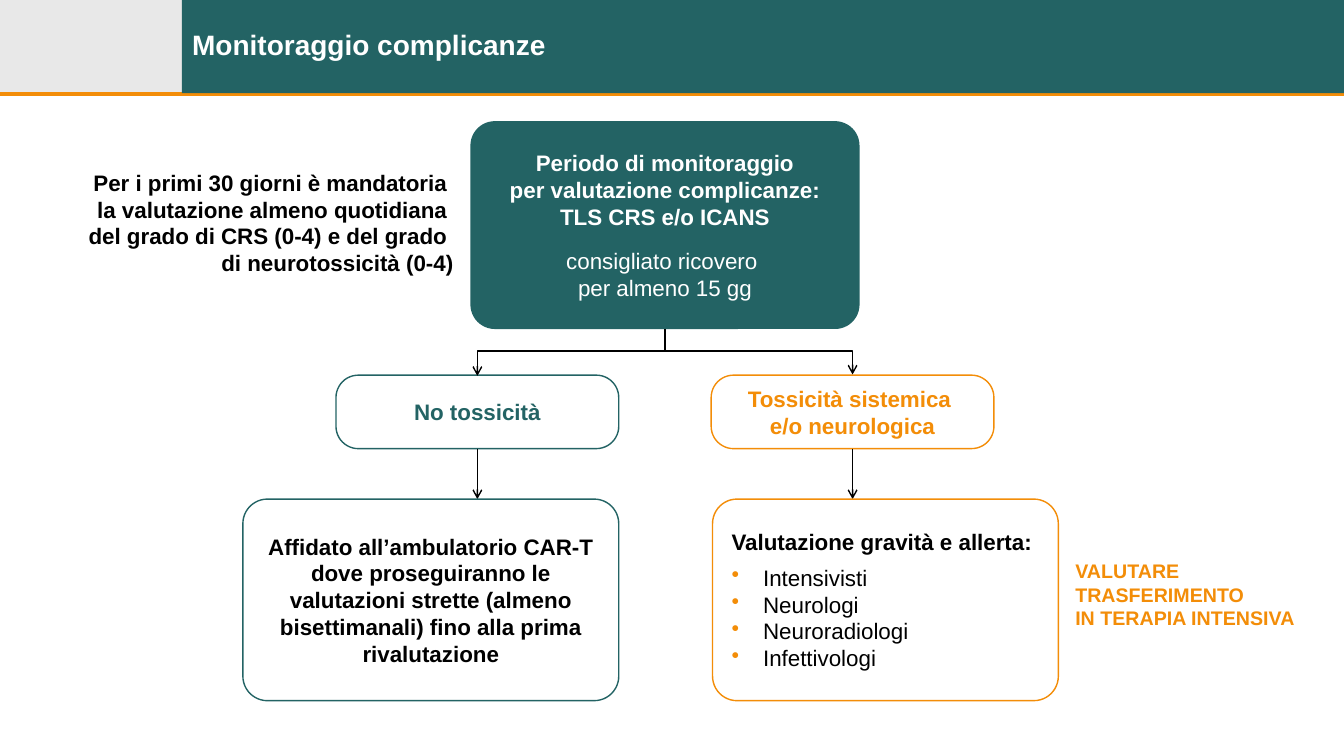
from lxml.etree import SubElement
from pptx import Presentation
from pptx.dml.color import RGBColor
from pptx.enum.shapes import MSO_CONNECTOR as Link, MSO_SHAPE as Shape
from pptx.enum.text import MSO_ANCHOR as Anchor, PP_ALIGN as Align
from pptx.oxml.ns import qn
from pptx.util import Pt

TEAL, ORANGE, GREY = "236364", "F38D08", "E8E8E8"
BLACK, WHITE = "000000", "FFFFFF"


def rgb(value):
    return RGBColor.from_string(value)


class FlowSlide:
    """Holds the slide and its style; all lengths are in points."""

    font = "Arial"

    def __init__(self, slide):
        self.slide = slide
        self.shapes = slide.shapes

    def set_text(self, frame, paragraphs, inset=7.2, anchor=Anchor.MIDDLE):
        """Each paragraph is (text, style); style holds what differs from the default."""
        frame.word_wrap = True
        frame.vertical_anchor = anchor
        frame.margin_left = frame.margin_right = Pt(inset)
        frame.margin_top = frame.margin_bottom = Pt(3.6)
        for index, (text, style) in enumerate(paragraphs):
            paragraph = frame.add_paragraph() if index else frame.paragraphs[0]
            paragraph.text = text
            if "bullet" in style:
                self.bullet(paragraph, style["bullet"])
            paragraph.alignment = style.get("align", Align.CENTER)
            paragraph.space_before = Pt(style.get("before", 0))
            paragraph.line_spacing = style.get("spacing", 1.0)
            font = paragraph.font
            font.name, font.size = self.font, Pt(style.get("size", 16))
            font.bold = style.get("bold", True)
            font.color.rgb = rgb(style.get("color", BLACK))

    def bullet(self, paragraph, color):
        properties = paragraph._p.get_or_add_pPr()
        properties.set("marL", str(Pt(22.5)))
        properties.set("indent", str(-Pt(22.5)))
        bullet_color = SubElement(properties, qn("a:buClr"))
        SubElement(bullet_color, qn("a:srgbClr"), val=color)
        SubElement(properties, qn("a:buChar"), char="•")

    def title(self, text, left, top, width, height, fill):
        title = self.shapes.title
        title.left, title.top, title.width, title.height = map(Pt, (left, top, width, height))
        title.fill.solid()
        title.fill.fore_color.rgb = rgb(fill)
        style = dict(align=Align.LEFT, size=20, color=WHITE, spacing=0.9)
        self.set_text(title.text_frame, [(text, style)])
        self.shapes._spTree.append(title._element)  # in front of the header rule

    def box(self, left, top, width, height, paragraphs=(), fill=None, line=None,
            radius=0, inset=0):
        kind = Shape.ROUNDED_RECTANGLE if radius else Shape.RECTANGLE
        box = self.shapes.add_shape(kind, *map(Pt, (left, top, width, height)))
        box.shadow.inherit = False
        if radius:
            box.adjustments[0] = radius / min(width, height)
        if fill:
            box.fill.solid()
            box.fill.fore_color.rgb = rgb(fill)
        else:
            box.fill.background()
        if line:
            box.line.color.rgb = rgb(line)
            box.line.width = Pt(1)
        else:
            box.line.fill.background()
        self.set_text(box.text_frame, paragraphs, inset)
        return box

    def note(self, left, top, width, height, text, **style):
        note = self.shapes.add_textbox(*map(Pt, (left, top, width, height)))
        self.set_text(note.text_frame, [(text, style)], anchor=Anchor.TOP)

    def line(self, x1, y1, x2, y2, color=BLACK, width=1, ends=(), kind=Link.STRAIGHT):
        line = self.shapes.add_connector(kind, *map(Pt, (x1, y1, x2, y2)))
        line.line.color.rgb = rgb(color)
        line.line.width = Pt(width)
        for end in ends:
            SubElement(line.line._get_or_add_ln(), qn(f"a:{end}"), type="arrow")
        SubElement(line._element.spPr, qn("a:effectLst"))
        return line

    def fork(self, left, right, bottom, rise):
        """Bracket over two boxes: an elbow of 1 pt width, turned by 90 degrees."""
        center, half = (left + right) / 2, (right - left) / 2
        fork = self.line(center + 0.5, bottom + half, center - 0.5, bottom - half,
                         ends=("headEnd", "tailEnd"), kind=Link.ELBOW)
        properties = fork._element.spPr
        properties.xfrm.set("rot", "5400000")
        geometry = properties.find(qn("a:prstGeom"))
        guides = geometry.get_or_add_avLst()
        SubElement(guides, qn("a:gd"), name="adj1", fmla=f"val {rise * 100000}")


def main():
    deck = Presentation()
    deck.slide_width, deck.slide_height = Pt(960), Pt(540)
    page = FlowSlide(deck.slides.add_slide(deck.slide_layouts[5]))

    # Header
    page.box(0, 0, 130, 66.5, fill=GREY)
    page.line(0, 67, 960, 67, ORANGE, 3)
    page.title("Monitoraggio complicanze", 130, 0, 830, 66.5, TEAL)

    # Monitoring period
    period = page.box(336, 86.5, 278, 148.5, [
        ("Periodo di monitoraggio\nper valutazione complicanze:\nTLS CRS e/o ICANS",
         dict(color=WHITE)),
        ("consigliato ricovero \nper almeno 15 gg",
         dict(color=WHITE, bold=False, before=12)),
    ], fill=TEAL, radius=17.5)

    # Outcomes, each with an arrow to its action
    outcomes = [(240, "No tossicità", TEAL),
                (508, "Tossicità sistemica \ne/o neurologica", ORANGE)]
    for left, text, color in outcomes:
        outcome = page.box(left, 268, 202, 52.5, [(text, dict(color=color))],
                           line=color, radius=16)
        arrow = page.line(left + 101, 320.5, left + 101, 356.5, ends=("tailEnd",))
        arrow.begin_connect(outcome, 2)

    # Actions
    page.box(173.5, 356.5, 268.5, 144, [
        ("Affidato all’ambulatorio CAR-T dove proseguiranno le valutazioni strette "
         "(almeno bisettimanali) fino alla prima rivalutazione", {}),
    ], line=TEAL, radius=17.5, inset=8.5)
    specialists = ["Intensivisti", "Neurologi", "Neuroradiologi", "Infettivologi"]
    page.box(509, 356.5, 247, 144, [
        ("Valutazione gravità e allerta:", dict(align=Align.LEFT)),
        *((name, dict(align=Align.LEFT, bold=False, bullet=ORANGE,
                      before=0 if index else 6))
          for index, name in enumerate(specialists)),
    ], line=ORANGE, radius=17.5, inset=8.5)

    # Side notes
    page.note(761, 396, 176, 58.5, "VALUTARE TRASFERIMENTO \nIN TERAPIA INTENSIVA",
              align=Align.LEFT, size=14, color=ORANGE)
    page.note(16.5, 117, 314.5, 85,
              "Per i primi 30 giorni è mandatoria \nla valutazione almeno quotidiana \n"
              "del grado di CRS (0-4) e del grado \ndi neurotossicità (0-4)",
              align=Align.RIGHT)

    # Branch from the period to the outcomes
    page.fork(341, 609, 268, 18)
    trunk = page.line(475, 235, 475, 250.5)
    trunk.begin_connect(period, 2)

    deck.save("out.pptx")


if __name__ == "__main__":
    main()
